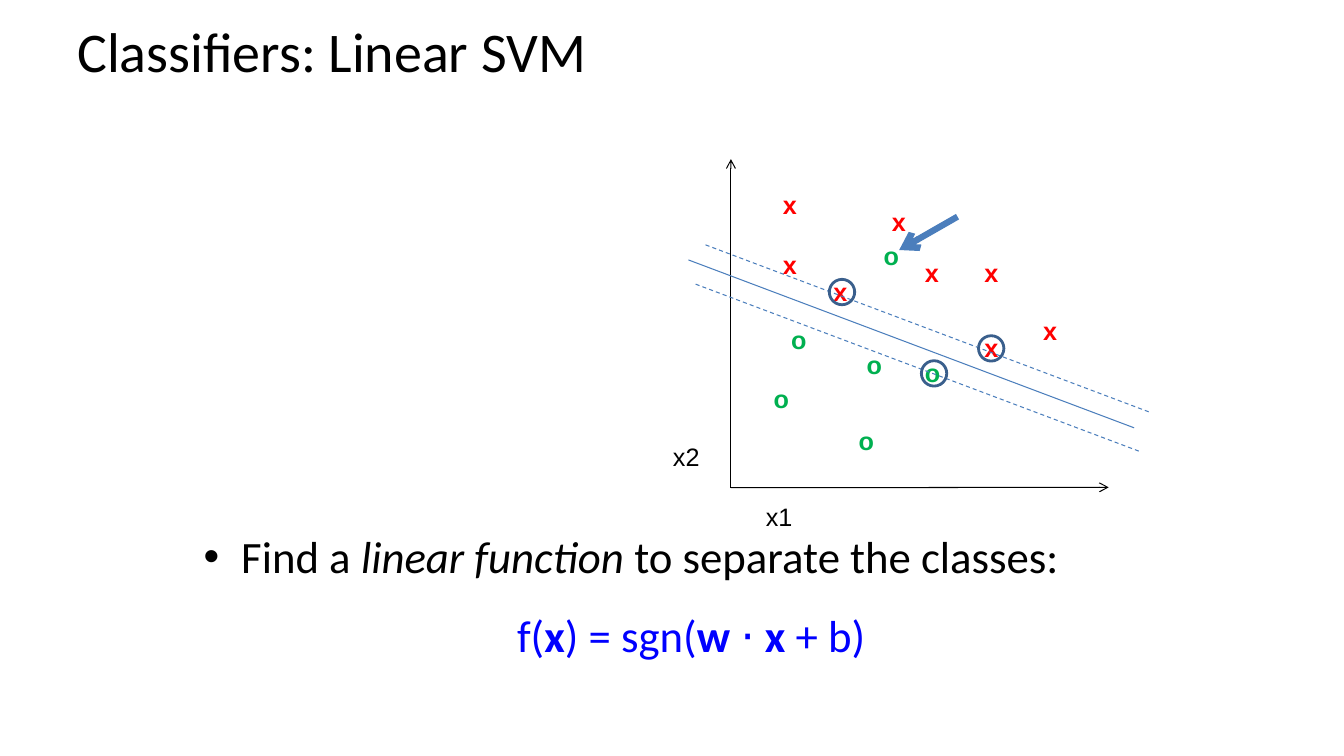
from dataclasses import dataclass

from lxml.etree import SubElement
from pptx import Presentation
from pptx.dml.color import RGBColor
from pptx.enum.dml import MSO_LINE
from pptx.enum.shapes import MSO_CONNECTOR, MSO_SHAPE
from pptx.enum.text import MSO_ANCHOR, PP_ALIGN
from pptx.oxml.ns import qn
from pptx.util import Cm, Pt


@dataclass(frozen=True)
class Theme:
    ink: str = "000000"
    positive: str = "FF0000"
    negative: str = "00B050"
    boundary: str = "4B7EBC"
    ring: str = "3A5F8C"
    formula: str = "0000FF"
    text_font: str = "Calibri"
    plot_font: str = "Arial"
    title_size: int = 40
    body_size: int = 32
    plot_size: int = 18


THEME = Theme()

# Content: all lengths in centimetres
TITLE = "Classifiers: Linear SVM"
TITLE_BOX = (1.7, 0, 30.48, 2.54)
STATEMENT_BOX = (4.88, 13.34, 24.13, 3.68)
FINDING = [("Find a ", ""), ("linear function ", "italic"),
           ("to separate the classes:", "")]
FORMULA = [("f(", ""), ("x", "bold"), (") = sgn(", ""), ("w ", "bold"),
           ("⋅ ", ""), ("x ", "bold"), ("+ b)", "")]
SAMPLES = {
    "x": (THEME.positive, [(23.06, 6.35), (24.56, 6.35), (24.56, 8.26), (26.04, 7.82),
                           (19.48, 4.65), (19.48, 6.15), (22.23, 5.08), (20.75, 6.83)]),
    "o": (THEME.negative, [(22.02, 5.92), (23.06, 8.89), (19.25, 9.53),
                           (19.69, 8.05), (21.39, 10.59), (21.59, 8.69)]),
}
SAMPLE_SIZE = (0.9, 1.02)
AXIS_LABELS = {"x2": (16.71, 11), "x1": (19.05, 12.5)}
AXIS_LABEL_SIZE = (1.19, 1.02)
ORIGIN = (18.42, 12.29)
AXIS_ENDS = [(18.42, 4.01), (27.94, 12.28)]
BOUNDARY_START = (17.35, 6.55)
MARGIN_STARTS = [(17.78, 6.17), (17.53, 7.16)]
BOUNDARY_RUN, BOUNDARY_DROP = 11.23, 4.23
SUPPORT_VECTORS = [(20.9, 7.04), (24.66, 8.46), (23.22, 9.09)]
RING_DIAMETER = 0.64
OUTLIER_POINTER = ((24.13, 5.46), (22.66, 6.3))
HANGING = 0.95

deck = Presentation()
deck.slide_width, deck.slide_height = Cm(33.87), Cm(19.05)
slide = deck.slides.add_slide(deck.slide_layouts[6])


def style(font, face, size, color, bold=False):
    font.name, font.size, font.bold = face, Pt(size), bold
    font.color.rgb = RGBColor.from_string(color)


def add_text(box, text, face, size, color, bold=False, wrap=False):
    frame = slide.shapes.add_textbox(*map(Cm, box)).text_frame
    frame.word_wrap = wrap
    frame.text = text
    style(frame.paragraphs[0].runs[0].font, face, size, color, bold)
    return frame


def add_line(start, end, color, width=0.75, dashed=False, arrow=False):
    line = slide.shapes.add_connector(MSO_CONNECTOR.STRAIGHT, *map(Cm, (*start, *end)))
    line.line.color.rgb = RGBColor.from_string(color)
    line.line.width = Pt(width)
    if dashed:
        line.line.dash_style = MSO_LINE.DASH
    properties = line.line._get_or_add_ln()
    if arrow:
        SubElement(properties, qn("a:tailEnd"), type="arrow")
    SubElement(properties.getparent(), qn("a:effectLst"))


def fill_paragraph(paragraph, pieces, color, bullet=None):
    properties = paragraph._p.get_or_add_pPr()
    properties.set("marL", str(Cm(HANGING)))
    properties.set("indent", str(-Cm(HANGING) if bullet else 0))
    if bullet:
        SubElement(properties, qn("a:buFont"), typeface=THEME.plot_font)
        SubElement(properties, qn("a:buChar"), char=bullet)
    paragraph.line_spacing = 0.9
    for text, emphasis in pieces:
        run = paragraph.add_run()
        run.text = text
        style(run.font, THEME.text_font, THEME.body_size, color, emphasis == "bold")
        run.font.italic = emphasis == "italic"


# Title
title = add_text(TITLE_BOX, TITLE, THEME.text_font, THEME.title_size, THEME.ink, wrap=True)
title.vertical_anchor = MSO_ANCHOR.MIDDLE

# Samples of both classes
for mark, (color, places) in SAMPLES.items():
    for place in places:
        add_text((*place, *SAMPLE_SIZE), mark, THEME.plot_font, THEME.plot_size, color, bold=True)

# Axes
for axis_end in AXIS_ENDS:
    add_line(ORIGIN, axis_end, THEME.ink, arrow=True)
for label, place in AXIS_LABELS.items():
    add_text((*place, *AXIS_LABEL_SIZE), label, THEME.plot_font, THEME.plot_size, THEME.ink)

# Boundary and its parallel margins
for start in [BOUNDARY_START, *MARGIN_STARTS]:
    end = (start[0] + BOUNDARY_RUN, start[1] + BOUNDARY_DROP)
    add_line(start, end, THEME.boundary, dashed=start in MARGIN_STARTS)

# Support vectors and outlier
for left, top in SUPPORT_VECTORS:
    ring = slide.shapes.add_shape(
        MSO_SHAPE.OVAL, *map(Cm, (left, top, RING_DIAMETER, RING_DIAMETER)))
    ring.shadow.inherit = False
    ring.fill.background()
    ring.line.color.rgb = RGBColor.from_string(THEME.ring)
    ring.line.width = Pt(2)
add_line(*OUTLIER_POINTER, THEME.boundary, width=4.5, arrow=True)

# Statement and formula
statement = slide.shapes.add_textbox(*map(Cm, STATEMENT_BOX)).text_frame
statement.word_wrap = True
fill_paragraph(statement.paragraphs[0], FINDING, THEME.ink, bullet="•")
formula = statement.add_paragraph()
fill_paragraph(formula, FORMULA, THEME.formula)
formula.alignment = PP_ALIGN.CENTER
formula.space_before = Pt(22)

deck.save("out.pptx")
